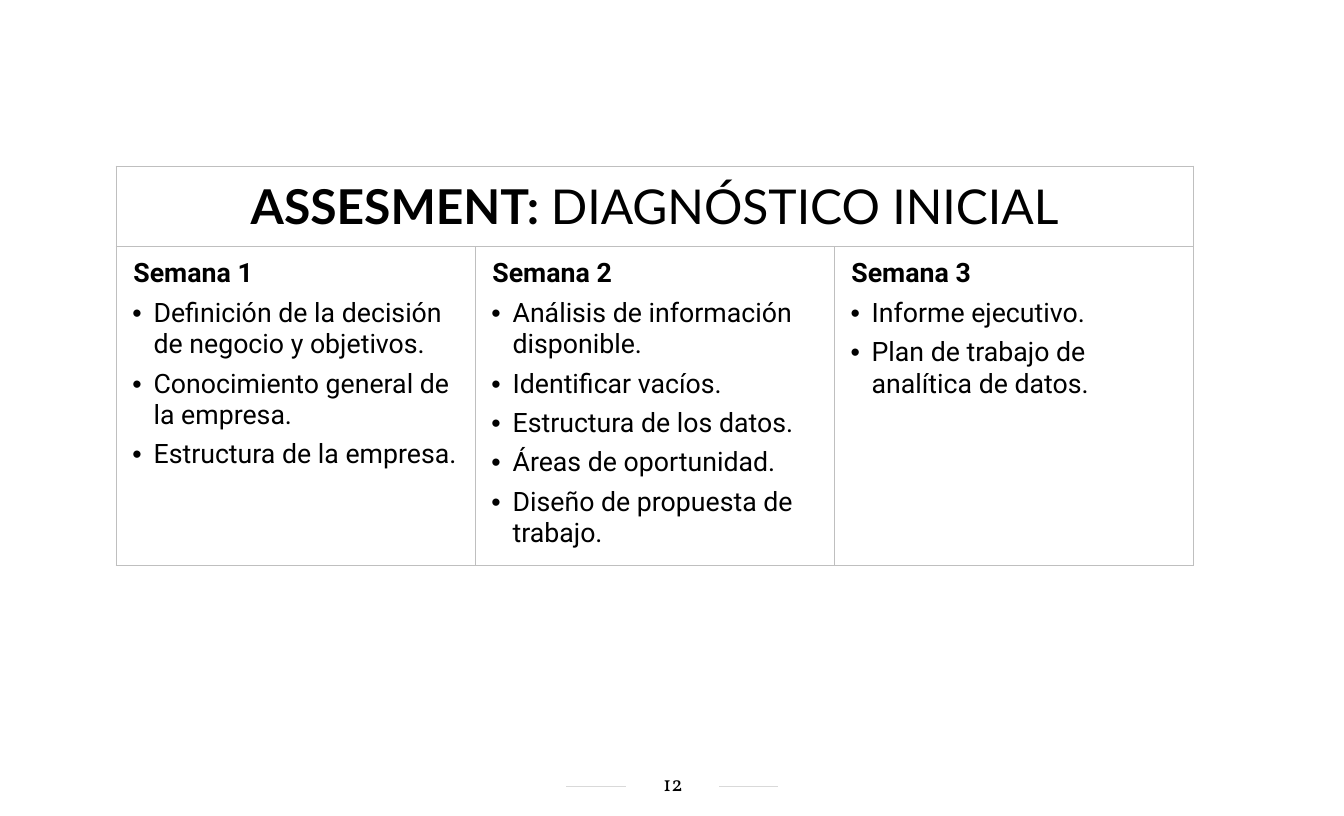
from typing import NamedTuple

from lxml import etree
from pptx import Presentation
from pptx.dml.color import RGBColor
from pptx.enum.shapes import MSO_CONNECTOR
from pptx.enum.text import MSO_ANCHOR, PP_ALIGN
from pptx.oxml.ns import qn
from pptx.util import Inches, Pt

CENTER = PP_ALIGN.CENTER
MIDDLE = MSO_ANCHOR.MIDDLE
STRAIGHT = MSO_CONNECTOR.STRAIGHT

BLACK, BORDER, RULE = "000000", "BFBFBF", "D9D9D9"
COLUMN_WIDTH = 3.74
ROW_HEIGHTS = (0.83, 3.27)


class Week(NamedTuple):
    name: str
    tasks: tuple[str, ...]


WEEKS = (
    Week("Semana 1", (
        "Definición de la decisión de negocio y objetivos.",
        "Conocimiento general de la empresa.",
        "Estructura de la empresa.",
    )),
    Week("Semana 2", (
        "Análisis de información disponible.",
        "Identificar vacíos.",
        "Estructura de los datos.",
        "Áreas de oportunidad.",
        "Diseño de propuesta de trabajo.",
    )),
    Week("Semana 3", (
        "Informe ejecutivo.",
        "Plan de trabajo de analítica de datos.",
    )),
)


def color(value: str) -> RGBColor:
    return RGBColor.from_string(value)


def set_font(font, name: str, size: float, bold: bool = False) -> None:
    font.name, font.size, font.bold = name, Pt(size), bold
    font.color.rgb = color(BLACK)


def set_margins(target, left: float, top: float, right: float, bottom: float) -> None:
    target.margin_left, target.margin_top = Inches(left), Inches(top)
    target.margin_right, target.margin_bottom = Inches(right), Inches(bottom)


def format_cell(cell) -> None:
    """Thin grey border on every side, no fill."""
    set_margins(cell, 0.1, 0.12, 0.1, 0.12)
    properties = cell._tc.get_or_add_tcPr()
    for side in ("a:lnL", "a:lnR", "a:lnT", "a:lnB"):
        line = etree.SubElement(properties, qn(side), w=str(Pt(1)))
        fill = etree.SubElement(line, qn("a:solidFill"))
        etree.SubElement(fill, qn("a:srgbClr"), val=BORDER)
    cell.fill.background()


def format_entry(paragraph, text: str, bullet: bool) -> None:
    """A week's name, or one of its tasks with a hanging bullet."""
    paragraph.text = text
    paragraph.space_after = Pt(6)
    properties = paragraph._p.get_or_add_pPr()
    properties.set("marL", str(Inches(0.29 if bullet else 0.08)))
    properties.set("indent", str(Inches(-0.22 if bullet else 0)))
    if bullet:
        etree.SubElement(properties, qn("a:buFont"), typeface="Arial")
        etree.SubElement(properties, qn("a:buChar"), char="•")
    set_font(paragraph.font, "Roboto", 20, bold=not bullet)


def fill_week(cell, week: Week) -> None:
    frame = cell.text_frame
    format_entry(frame.paragraphs[0], week.name, bullet=False)
    for task in week.tasks:
        format_entry(frame.add_paragraph(), task, bullet=True)


def add_plan(slide) -> None:
    plan = slide.shapes.add_table(
        len(ROW_HEIGHTS), len(WEEKS), Inches(1.21), Inches(1.73),
        Inches(COLUMN_WIDTH * len(WEEKS)), Inches(sum(ROW_HEIGHTS))).table
    plan.first_row = plan.horz_banding = False
    for column in plan.columns:
        column.width = Inches(COLUMN_WIDTH)
    for row, height in zip(plan.rows, ROW_HEIGHTS):
        row.height = Inches(height)
    for cell in plan.iter_cells():
        format_cell(cell)

    # Heading across all weeks
    heading = plan.cell(0, 0)
    heading.merge(plan.cell(0, len(WEEKS) - 1))
    heading.vertical_anchor = MIDDLE
    paragraph = heading.text_frame.paragraphs[0]
    paragraph.alignment = CENTER
    for text, bold in (("ASSESMENT: ", True), ("DIAGNÓSTICO INICIAL", False)):
        run = paragraph.add_run()
        run.text = text
        set_font(run.font, "Lato", 36, bold)

    # One column per week
    for index, week in enumerate(WEEKS):
        fill_week(plan.cell(1, index), week)


def add_rule(slide, start: float, end: float, y: float) -> None:
    rule = slide.shapes.add_connector(
        STRAIGHT, Inches(start), Inches(y), Inches(end), Inches(y))
    rule.line.color.rgb = color(RULE)
    rule.line.width = Pt(0.75)
    etree.SubElement(rule._element.spPr, qn("a:effectLst"))


def add_page_number(slide, number: str) -> None:
    for start, end in ((5.9, 6.52), (7.49, 8.1)):
        add_rule(slide, start, end, 8.19)
    frame = slide.shapes.add_textbox(
        Inches(6.51), Inches(8.04), Inches(0.98), Inches(0.26)).text_frame
    frame.word_wrap = True
    frame.vertical_anchor = MIDDLE
    set_margins(frame, 0.12, 0.02, 0.1, 0.05)
    paragraph = frame.paragraphs[0]
    paragraph.text = number
    paragraph.alignment = CENTER
    set_font(paragraph.font, "Vollkorn", 16)


def main() -> None:
    presentation = Presentation()
    presentation.slide_width = Inches(14)
    presentation.slide_height = Inches(8.5)
    blank_layout = presentation.slide_layouts[6]
    slide = presentation.slides.add_slide(blank_layout)
    add_page_number(slide, "12")
    add_plan(slide)
    presentation.save("out.pptx")


if __name__ == "__main__":
    main()
